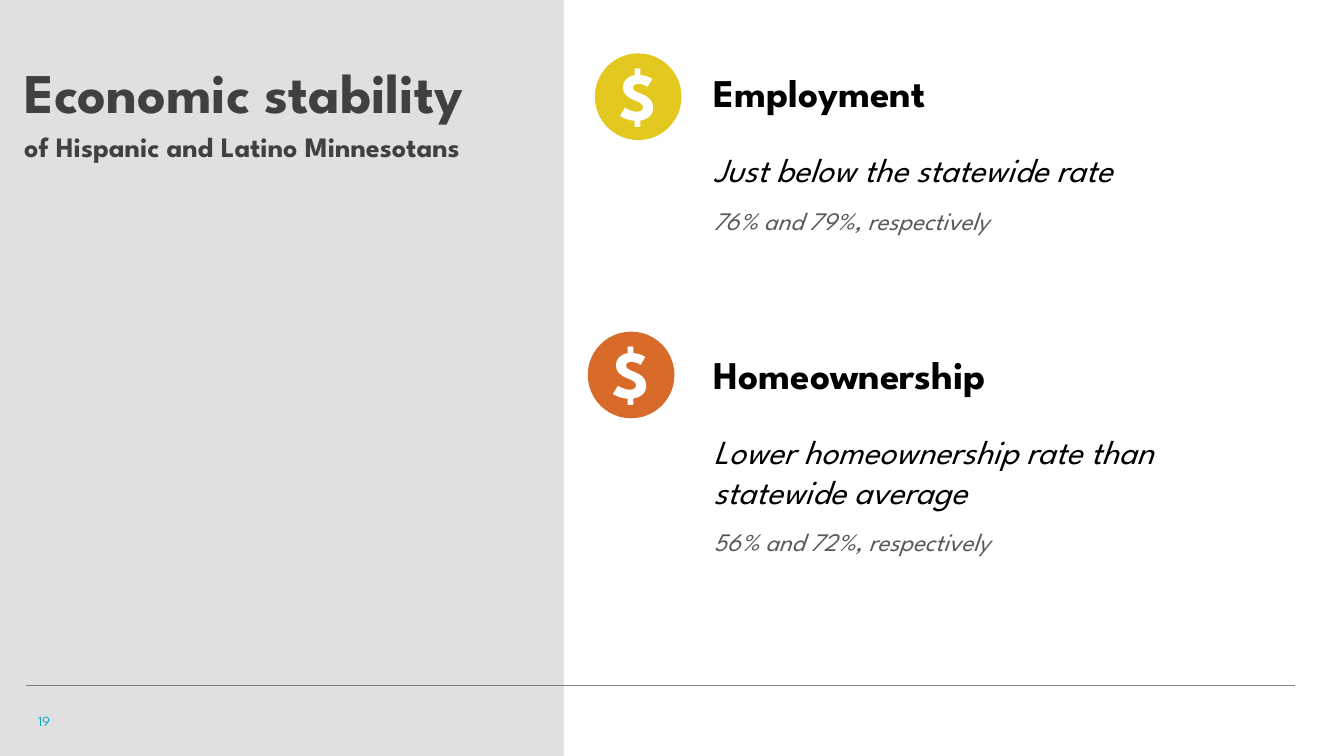
from pptx import Presentation
from pptx.dml.color import RGBColor
from pptx.enum.shapes import MSO_CONNECTOR, MSO_SHAPE
from pptx.enum.text import MSO_ANCHOR, PP_ALIGN
from pptx.oxml.ns import qn
from pptx.util import Inches, Pt
from lxml import etree

RECTANGLE = MSO_SHAPE.RECTANGLE
OVAL = MSO_SHAPE.OVAL
STRAIGHT = MSO_CONNECTOR.STRAIGHT
TOP, MIDDLE, BOTTOM = MSO_ANCHOR.TOP, MSO_ANCHOR.MIDDLE, MSO_ANCHOR.BOTTOM
LEFT, CENTER = PP_ALIGN.LEFT, PP_ALIGN.CENTER


def color(value):
    return RGBColor.from_string(value)


def style(span, size, value, bold=False, italic=False):
    span.font.name = "League Spartan"
    span.font.size = Pt(size)
    span.font.color.rgb = color(value)
    span.font.bold = bold
    span.font.italic = italic


deck = Presentation()
deck.slide_width = Inches(13.33)
deck.slide_height = Inches(7.5)
page = deck.slides.add_slide(deck.slide_layouts[5])

title = page.shapes.title
panel = page.shapes.add_shape(RECTANGLE, Inches(-0.03), 0, Inches(5.62), Inches(7.5))
panel.shadow.inherit = False
panel.fill.solid()
panel.fill.fore_color.rgb = color("E0E0E0")
panel.line.fill.background()
title._element.addprevious(panel._element)

rule = page.shapes.add_connector(STRAIGHT, Inches(0.26), Inches(6.8), Inches(12.84), Inches(6.8))
rule.line.color.rgb = color("808080")
rule.line.width = Pt(0.5)
etree.SubElement(rule._element.spPr, qn("a:effectLst"))

title.left, title.top = Inches(0.14), Inches(0.32)
title.width, title.height = Inches(5.24), Inches(1.35)
title.text_frame.text = "Economic stability\vof Hispanic and Latino Minnesotans"
title.text_frame.word_wrap = True
title.text_frame.vertical_anchor = BOTTOM
heading = title.text_frame.paragraphs[0]
heading.alignment = LEFT
heading.line_spacing = 1.14
for span, size in zip(heading.runs, (40, 20)):
    style(span, size, "404040", bold=True)

findings = [
    ("Employment", 28, "000000", True, 0),
    ("Just below the statewide rate", 24, "000000", False, 24),
    ("76% and 79%, respectively", 18, "595959", False, 11),
    ("Homeownership", 28, "000000", True, 82),
    ("Lower homeownership rate than statewide average", 24, "000000", False, 24),
    ("56% and 72%, respectively", 18, "595959", False, 11),
]
body = page.shapes.add_textbox(Inches(6.98), Inches(0.63), Inches(5.52), Inches(6.13))
body.text_frame.word_wrap = True
body.text_frame.vertical_anchor = TOP
body.text_frame.text = "\n".join(finding[0] for finding in findings)
for para, (_, size, value, bold, gap) in zip(body.text_frame.paragraphs, findings):
    if gap:
        para.space_before = Pt(gap)
    style(para.runs[0], size, value, bold=bold, italic=not bold)

number = page.shapes.add_textbox(Inches(0.28), Inches(6.95), Inches(3), Inches(0.4))
number.text_frame.word_wrap = True
number.text_frame.vertical_anchor = MIDDLE
number.text_frame.text = "19"
style(number.text_frame.paragraphs[0].runs[0], 10, "0FACBD")

for left, top, value in ((5.9, 0.53, "E3C91F"), (5.83, 3.29, "D96B2A")):
    icon = page.shapes.add_group_shape()
    disc = icon.shapes.add_shape(OVAL, Inches(left), Inches(top), Inches(0.86), Inches(0.86))
    disc.shadow.inherit = False
    disc.fill.solid()
    disc.fill.fore_color.rgb = color(value)
    disc.line.fill.background()
    sign = icon.shapes.add_textbox(Inches(left + 0.08), Inches(top - 0.05), Inches(0.71), Inches(0.91))
    sign.text_frame.word_wrap = True
    sign.text_frame.text = "$"
    para = sign.text_frame.paragraphs[0]
    para.alignment = CENTER
    style(para.runs[0], 48, "FFFFFF", bold=True)

deck.save("out.pptx")
